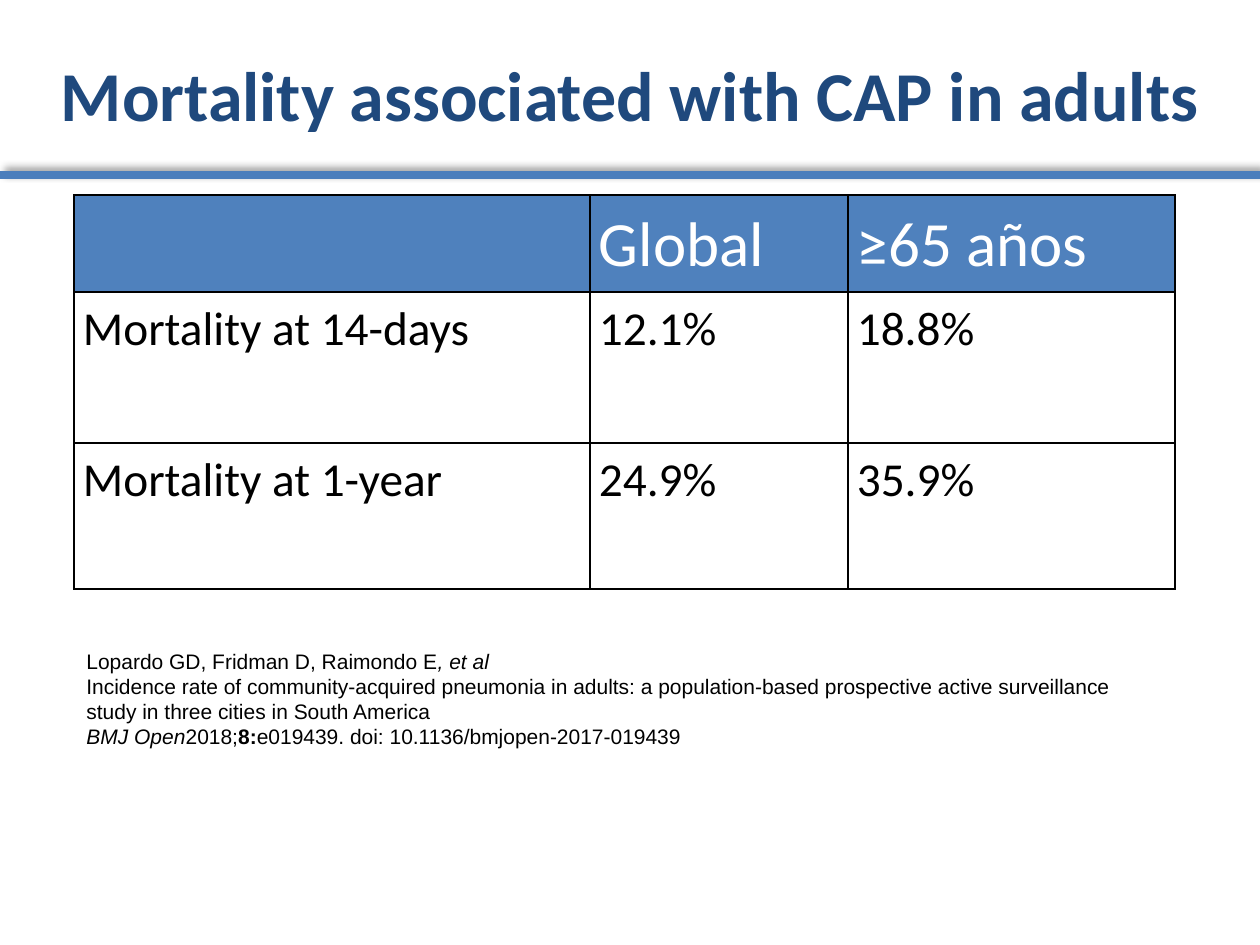
from lxml.etree import SubElement
from pptx import Presentation
from pptx.dml.color import RGBColor
from pptx.enum.shapes import MSO_CONNECTOR
from pptx.enum.text import MSO_ANCHOR, MSO_AUTO_SIZE, PP_ALIGN
from pptx.oxml.ns import qn
from pptx.util import Pt

PX = 914400 / 126
NAVY = RGBColor(0x1F, 0x49, 0x7D)
RULE_BLUE = RGBColor(0x4B, 0x7E, 0xBC)
HEADER_BLUE = RGBColor(0x4F, 0x81, 0xBD)
WHITE = RGBColor(0xFF, 0xFF, 0xFF)
BLACK = RGBColor(0, 0, 0)

COLUMN_WIDTHS = [516, 258, 327]
ROW_HEIGHTS = [97, 151, 146]
MORTALITY = [
    ["", "Global", "≥65 años"],
    ["Mortality at 14-days", "12.1%", "18.8%"],
    ["Mortality at 1-year", "24.9%", "35.9%"],
]
# Each line is a list of (text, style) pairs
CITATION = [
    [("Lopardo GD, Fridman D, Raimondo E", ""), (", et al", "italic")],
    [("Incidence rate of community-acquired pneumonia in adults: a population-based "
      "prospective active surveillance study in three cities in South America", "")],
    [("BMJ Open", "italic"), ("2018;", ""), ("8:", "bold"),
     ("e019439. doi: 10.1136/bmjopen-2017-019439", "")],
]


def px(value):
    return round(value * PX)


def add_span(para, text, font, size, color, style=""):
    span = para.add_run()
    span.text = text
    span.font.name = font
    span.font.size = Pt(size)
    span.font.color.rgb = color
    span.font.bold = style == "bold"
    span.font.italic = style == "italic"


def add_text_box(page, left, top, width, height):
    box = page.shapes.add_textbox(px(left), px(top), px(width), px(height))
    box.text_frame.word_wrap = True
    return box.text_frame


def add_title(page, text):
    frame = add_text_box(page, 0, 16, 1260, 155)
    frame.vertical_anchor = MSO_ANCHOR.MIDDLE
    para = frame.paragraphs[0]
    para.alignment = PP_ALIGN.CENTER
    add_span(para, text, "Calibri", 40, NAVY, "bold")


def add_rule(page, y):
    """Draw the full-width line with its soft shadow."""
    rule = page.shapes.add_connector(MSO_CONNECTOR.STRAIGHT, 0, px(y), px(1260), px(y))
    rule.line.color.rgb = RULE_BLUE
    rule.line.width = Pt(5)
    effects = SubElement(rule._element.spPr, qn("a:effectLst"))
    shadow = SubElement(effects, qn("a:outerShdw"), blurRad=str(Pt(4)), dist=str(Pt(3)),
                        dir=str(315 * 60000), rotWithShape="0")
    color = SubElement(shadow, qn("a:srgbClr"), val=str(BLACK))
    SubElement(color, qn("a:alpha"), val="40000")


def add_borders(cell):
    properties = cell._tc.get_or_add_tcPr()
    for side in ("lnL", "lnR", "lnT", "lnB"):
        line = SubElement(properties, qn(f"a:{side}"), w=str(Pt(1)))
        fill = SubElement(line, qn("a:solidFill"))
        SubElement(fill, qn("a:srgbClr"), val=str(BLACK))


def fill_cell(cell, text, is_header):
    cell.margin_left = cell.margin_right = px(9)
    cell.margin_top = cell.margin_bottom = 0
    add_borders(cell)
    if is_header:
        cell.fill.solid()
        cell.fill.fore_color.rgb = HEADER_BLUE
    else:
        cell.fill.background()
    if text:
        para = cell.text_frame.paragraphs[0]
        para.line_spacing = 1.15
        size, color = (36, WHITE) if is_header else (27, BLACK)
        add_span(para, text, "Calibri", size, color)


def add_mortality_table(page, left, top):
    table = page.shapes.add_table(
        len(ROW_HEIGHTS), len(COLUMN_WIDTHS), px(left), px(top),
        px(sum(COLUMN_WIDTHS)), px(sum(ROW_HEIGHTS))).table
    for column, width in zip(table.columns, COLUMN_WIDTHS):
        column.width = px(width)
    for row, height in zip(table.rows, ROW_HEIGHTS):
        row.height = px(height)
    for r, values in enumerate(MORTALITY):
        for c, text in enumerate(values):
            fill_cell(table.cell(r, c), text, r == 0)


def add_citation(page, left, top, width, height):
    frame = add_text_box(page, left, top, width, height)
    frame.auto_size = MSO_AUTO_SIZE.SHAPE_TO_FIT_TEXT
    for index, spans in enumerate(CITATION):
        para = frame.add_paragraph() if index else frame.paragraphs[0]
        for text, style in spans:
            add_span(para, text, "Arial", 12, BLACK, style)


def main():
    deck = Presentation()
    deck.slide_width, deck.slide_height = px(1260), px(945)
    page = deck.slides.add_slide(deck.slide_layouts[6])
    add_rule(page, 175)
    add_title(page, "Mortality associated with CAP in adults")
    add_mortality_table(page, 74, 195)
    add_citation(page, 74, 642, 1101, 115)
    deck.save("out.pptx")


if __name__ == "__main__":
    main()
